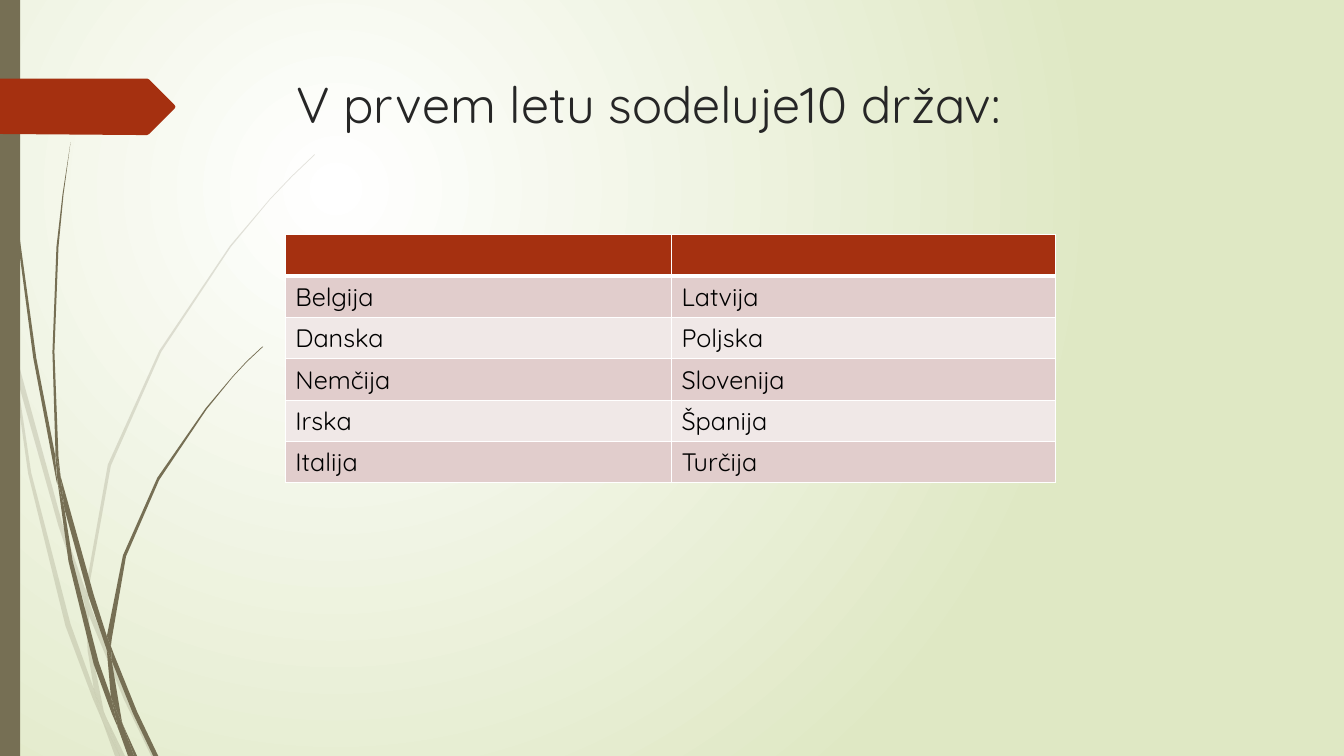
from dataclasses import dataclass

from lxml.etree import SubElement
from pptx import Presentation
from pptx.dml.color import RGBColor as Color
from pptx.enum.shapes import MSO_SHAPE as Preset
from pptx.enum.text import MSO_ANCHOR as Anchor, PP_ALIGN as Align
from pptx.oxml.ns import qn
from pptx.util import Inches, Pt


@dataclass(frozen=True)
class Theme:
    font: str = "Quicksand"
    title_size: int = 36
    body_size: int = 18
    title: str = "262626"
    text: str = "000000"
    white: str = "FFFFFF"
    background: str = "DFE8C4"
    stem: str = "766F54"
    accent: str = "A53010"
    bands: tuple = ("E1CDCC", "F0E8E7")


# Outlines of the stem pieces, as x, y corners in inches
PALE_STEMS = [
    [(0.11, 3.5), (0.09, 3.22), (0, 2.82), (0, 2.99), (0.1, 3.44)],
    [(0.58, 5.22), (0.84, 5.99), (0.85, 5.86), (0.62, 5.2), (0.14, 3.45),
     (0.17, 3.76)],
    [(0.92, 6.07), (0.88, 5.96), (0.88, 6.1), (1.23, 6.94), (1.5, 7.5),
     (1.55, 7.5), (1.27, 6.92)],
    [(1.19, 7.5), (1.24, 7.5), (1.05, 7.11)],
    [(0.93, 6.83), (0.7, 6.19), (0.31, 4.69), (0.17, 3.76), (0.11, 3.5),
     (0.28, 4.7), (0.65, 6.21), (0.92, 6.93), (1.01, 7.14), (0.99, 7.07)],
    [(0.84, 5.99), (0.87, 6.46), (0.93, 6.83), (0.96, 6.92), (1.05, 7.11),
     (1.03, 7.06), (0.91, 6.46), (0.88, 6.1), (0.88, 6.08)],
    [(0.88, 5.84), (1.1, 4.62), (1.6, 3.49), (2.29, 2.45), (2.68, 1.98),
     (2.9, 1.75), (3.12, 1.54), (3.12, 1.53), (2.89, 1.75), (2.68, 1.97),
     (2.28, 2.44), (1.58, 3.48), (1.07, 4.61), (0.85, 5.84), (0.85, 5.86),
     (0.88, 5.96)],
    [(1.01, 7.14), (1.14, 7.5), (1.19, 7.5)],
    [(0.88, 6.08), (0.88, 6.1), (0.88, 5.96), (0.85, 5.86), (0.84, 5.99)],
    [(0.96, 6.92), (0.93, 6.83), (0.99, 7.07), (1.01, 7.14), (1.19, 7.5),
     (1.05, 7.11)],
]
DARK_STEMS = [
    [(0.07, 1.1), (0.17, 2.33), (0.33, 3.55), (0.56, 4.77), (0.57, 4.81),
     (0.55, 4.57), (0.55, 4.53), (0.36, 3.55), (0.19, 2.32), (0.08, 1.09),
     (0.05, 0.48), (0.04, 0), (0.03, 0), (0.04, 0.48)],
    [(0.88, 5.92), (1.06, 6.45), (1.06, 6.31), (0.93, 5.9), (0.6, 4.72),
     (0.64, 5.05)],
    [(1.13, 6.49), (1.1, 6.41), (1.11, 6.56), (1.32, 7.08), (1.52, 7.5),
     (1.57, 7.5), (1.36, 7.06)],
    [(1.1, 6.91), (0.98, 6.57), (0.72, 5.56), (0.64, 5.05), (0.57, 4.77),
     (0.68, 5.57), (0.93, 6.59), (1.11, 7.08), (1.17, 7.22), (1.16, 7.17)],
    [(0.6, 4.72), (0.58, 4.53), (0.54, 3.49), (0.58, 2.45), (0.63, 1.93),
     (0.7, 1.41), (0.62, 1.93), (0.56, 2.45), (0.52, 3.49), (0.55, 4.49)],
    [(1.33, 7.5), (1.36, 7.5), (1.22, 7.19)],
    [(0.57, 4.77), (0.64, 5.05), (0.6, 4.72), (0.55, 4.49), (0.55, 4.53)],
    [(1.11, 6.33), (1.25, 5.52), (1.58, 4.76), (2.05, 4.06), (2.31, 3.74),
     (2.45, 3.59), (2.61, 3.44), (2.6, 3.44), (2.45, 3.58), (2.31, 3.73),
     (2.04, 4.05), (1.56, 4.74), (1.22, 5.51), (1.06, 6.31), (1.1, 6.41)],
    [(1.17, 7.22), (1.27, 7.5), (1.31, 7.5)],
    [(1.06, 6.45), (1.1, 6.91), (1.16, 7.06), (1.22, 7.19), (1.21, 7.16),
     (1.11, 6.56), (1.09, 6.51)],
    [(1.06, 6.45), (1.09, 6.51), (1.11, 6.56), (1.1, 6.41), (1.06, 6.31)],
    [(1.16, 7.06), (1.1, 6.91), (1.16, 7.17), (1.17, 7.22), (1.3, 7.5),
     (1.33, 7.5), (1.22, 7.19)],
]
ARROW = [(1.73, 1.08), (1.48, 1.33), (1.46, 1.34), (1.36, 1.34), (0, 1.33),
         (0, 0.78), (1.46, 0.78), (1.48, 0.79), (1.73, 1.04), (1.74, 1.06)]

COUNTRIES = [
    ("Belgija", "Latvija"),
    ("Danska", "Poljska"),
    ("Nemčija", "Slovenija"),
    ("Irska", "Španija"),
    ("Italija", "Turčija"),
]


class SlideBuilder:
    def __init__(self, slide, theme):
        self.slide = slide
        self.theme = theme

    def background(self):
        """Fill the slide with a glow centred a quarter of the way in."""
        fill = self.slide.background.fill
        fill.gradient()
        for stop, color in zip(fill.gradient_stops,
                               (self.theme.white, self.theme.background)):
            stop.color.rgb = Color.from_string(color)
        gradient = next(self.slide.element.iter(qn("a:gradFill")))
        linear = gradient.find(qn("a:lin"))
        circle = SubElement(gradient, qn("a:path"), {"path": "circle"})
        SubElement(circle, qn("a:fillToRect"),
                   {"l": "50000", "t": "50000", "r": "100000", "b": "100000"})
        gradient.replace(linear, circle)

    def paint(self, shape, color, opacity=100):
        shape.shadow.inherit = False
        shape.line.fill.background()
        shape.fill.solid()
        shape.fill.fore_color.rgb = Color.from_string(color)
        if opacity < 100:
            rgb = next(shape.element.spPr.iter(qn("a:srgbClr")))
            SubElement(rgb, qn("a:alpha"), {"val": str(opacity * 1000)})

    def outline(self, shapes, points, color, opacity=100):
        corners = [(Inches(x), Inches(y)) for x, y in points]
        builder = shapes.build_freeform(*corners[0])
        builder.add_line_segments(corners[1:], close=True)
        self.paint(builder.convert_to_shape(), color, opacity)

    def stems(self, pieces, opacity=100):
        group = self.slide.shapes.add_group_shape()
        for piece in pieces:
            self.outline(group.shapes, piece, self.theme.stem, opacity)

    def bar(self, left, top, width, height, color):
        box = map(Inches, (left, top, width, height))
        self.paint(self.slide.shapes.add_shape(Preset.RECTANGLE, *box), color)

    def arrow(self, points):
        self.outline(self.slide.shapes, points, self.theme.accent)

    def add_text(self, paragraph, text, size, color):
        paragraph.alignment = Align.LEFT
        run = paragraph.add_run()
        run.text = text
        run.font.name = self.theme.font
        run.font.size = Pt(size)
        run.font.color.rgb = Color.from_string(color)

    def title(self, text, left, top, width, height):
        box = map(Inches, (left, top, width, height))
        frame = self.slide.shapes.add_textbox(*box).text_frame
        frame.word_wrap = True
        frame.vertical_anchor = Anchor.TOP
        self.add_text(frame.paragraphs[0], text, self.theme.title_size,
                      self.theme.title)

    def style_cell(self, cell, color, top=1, bottom=1):
        properties = cell._tc.get_or_add_tcPr()
        for side, width in zip("LRTB", (1, 1, top, bottom)):
            line = SubElement(properties, qn(f"a:ln{side}"),
                              {"w": str(Pt(width))})
            solid = SubElement(line, qn("a:solidFill"))
            SubElement(solid, qn("a:srgbClr"), {"val": self.theme.white})
        cell.fill.solid()
        cell.fill.fore_color.rgb = Color.from_string(color)

    def table(self, rows, left, top, widths, row_height):
        """Draw the rows in two band colours below an empty header."""
        count = len(rows) + 1
        table = self.slide.shapes.add_table(
            count, len(widths), Inches(left), Inches(top),
            Inches(sum(widths)), Inches(row_height * count)).table
        table.horz_banding = False
        for column, width in zip(table.columns, widths):
            column.width = Inches(width)
        for cell in table.rows[0].cells:
            self.style_cell(cell, self.theme.accent, bottom=3)
        for index, names in enumerate(rows):
            band = self.theme.bands[index % 2]
            for cell, name in zip(table.rows[index + 1].cells, names):
                self.style_cell(cell, band, top=1 if index else 3)
                self.add_text(cell.text_frame.paragraphs[0], name,
                              self.theme.body_size, self.theme.text)


def main():
    presentation = Presentation()
    presentation.slide_width = Inches(13.33)
    presentation.slide_height = Inches(7.5)
    theme = Theme()
    slide = presentation.slides.add_slide(presentation.slide_layouts[6])
    builder = SlideBuilder(slide, theme)
    builder.background()
    builder.stems(PALE_STEMS, opacity=20)
    builder.stems(DARK_STEMS)
    builder.bar(0, 0, 0.2, 7.5, theme.stem)
    builder.arrow(ARROW)
    builder.title("V prvem letu sodeluje10 držav:", 2.84, 0.68, 7.72, 1.4)
    builder.table(COUNTRIES, 2.83, 2.33, (3.83, 3.81), 0.41)
    presentation.save("out.pptx")


if __name__ == "__main__":
    main()
